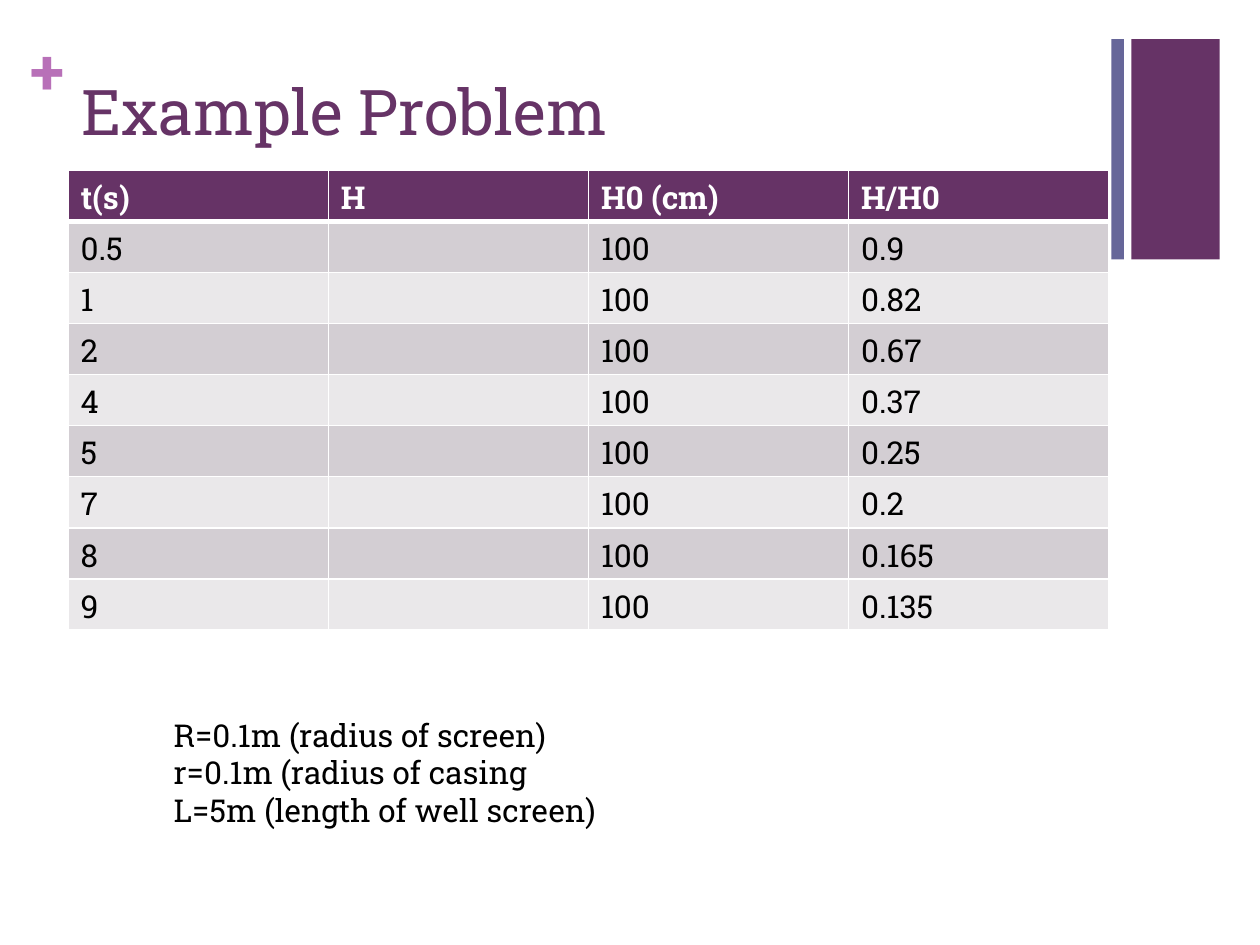
import pptx
import pptx.dml.color
import pptx.enum.shapes
import pptx.oxml.ns
import pptx.util
from lxml import etree

Inches = pptx.util.Inches
Pt = pptx.util.Pt
RGBColor = pptx.dml.color.RGBColor

PLUM = RGBColor(0x66, 0x33, 0x66)
SLATE = RGBColor(0x66, 0x66, 0x99)
ORCHID = RGBColor(0xB8, 0x70, 0xB8)
BAND_DARK = RGBColor(0xD3, 0xCE, 0xD3)
BAND_LIGHT = RGBColor(0xEA, 0xE8, 0xEA)
WHITE = RGBColor(0xFF, 0xFF, 0xFF)
BLACK = RGBColor(0, 0, 0)
FONT = "Roboto Slab"

HEADER = ["t(s)", "H", "H0 (cm)", "H/H0"]
READINGS = [
    ("0.5", "0.9"),
    ("1", "0.82"),
    ("2", "0.67"),
    ("4", "0.37"),
    ("5", "0.25"),
    ("7", "0.2"),
    ("8", "0.165"),
    ("9", "0.135"),
]
PARAMETERS = [
    "R=0.1m (radius of screen)",
    "r=0.1m (radius of casing",
    "L=5m (length of well screen)",
]


def set_font(p, size, color, bold=False):
    p.font.name = FONT
    p.font.size = Pt(size)
    p.font.bold = bold
    p.font.color.rgb = color


def add_bar(slide, left, width, color):
    sp = slide.shapes.add_shape(
        pptx.enum.shapes.MSO_SHAPE.RECTANGLE,
        Inches(left), Inches(0.31), Inches(width), Inches(1.75))
    sp.shadow.inherit = False
    sp.fill.solid()
    sp.fill.fore_color.rgb = color
    sp.line.fill.background()


def add_text(slide, box, lines, size, color, bold=False, inset=None):
    tf = slide.shapes.add_textbox(*map(Inches, box)).text_frame
    tf.word_wrap = True
    if inset is not None:
        tf.margin_left = tf.margin_right = Inches(inset)
        tf.margin_top = tf.margin_bottom = Inches(inset)
    tf.text = "\n".join(lines)
    for p in tf.paragraphs:
        set_font(p, size, color, bold)


def set_border(cell, side, width):
    qn = pptx.oxml.ns.qn
    tc_pr = cell._tc.get_or_add_tcPr()
    ln = etree.SubElement(tc_pr, qn(f"a:ln{side}"), w=str(Pt(width)))
    fill = etree.SubElement(ln, qn("a:solidFill"))
    etree.SubElement(fill, qn("a:srgbClr"), val=str(WHITE))


def style_cell(cell, row):
    is_header = row == 0
    for side in "LRTB":
        heavy = (row, side) in [(0, "B"), (1, "T")]
        set_border(cell, side, 3 if heavy else 1)
    cell.fill.solid()
    if is_header:
        cell.fill.fore_color.rgb = PLUM
    else:
        cell.fill.fore_color.rgb = BAND_DARK if row % 2 else BAND_LIGHT
    set_font(cell.text_frame.paragraphs[0], 18,
             WHITE if is_header else BLACK, is_header)


def add_readings_table(slide):
    rows = [HEADER] + [[t, "", "100", ratio] for t, ratio in READINGS]
    table = slide.shapes.add_table(
        len(rows), len(HEADER),
        Inches(0.54), Inches(1.35), Inches(8.26), Inches(3.65)).table
    for i, values in enumerate(rows):
        for j, value in enumerate(values):
            cell = table.cell(i, j)
            cell.text = value
            style_cell(cell, i)


def main():
    prs = pptx.Presentation()
    prs.slide_width, prs.slide_height = Inches(10), Inches(7.5)
    slide = prs.slides.add_slide(prs.slide_layouts[6])
    add_bar(slide, 8.98, 0.7, PLUM)
    add_text(slide, (0.24, 0.25, 0.29, 0.61), ["+"], 36, ORCHID, True, 0)
    add_bar(slide, 8.82, 0.1, SLATE)
    add_text(slide, (0.55, 0.53, 8.26, 1.22), ["Example Problem"], 36, PLUM)
    add_readings_table(slide)
    add_text(slide, (1.28, 5.63, 6.3, 1.01), PARAMETERS, 18, BLACK)
    prs.save("out.pptx")


if __name__ == "__main__":
    main()
